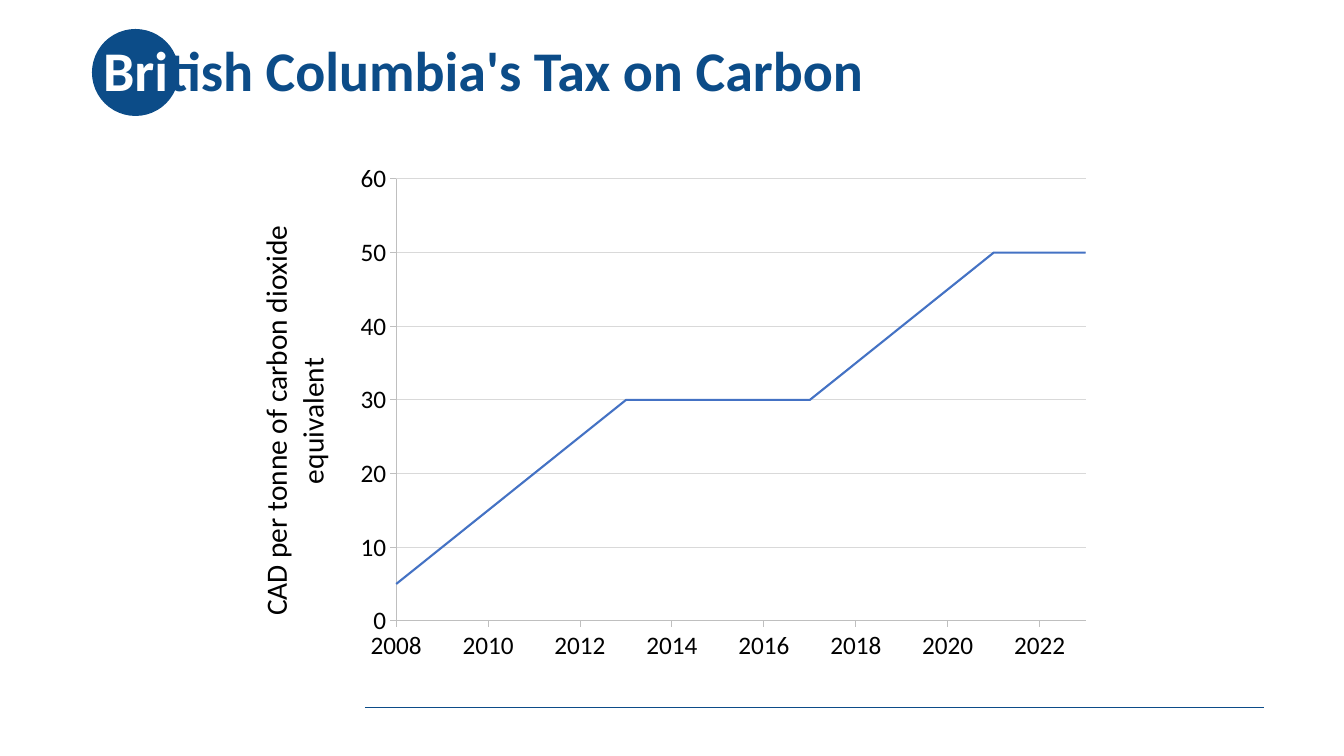
import dataclasses

import lxml.etree
import pptx
import pptx.chart.data
import pptx.dml.color
import pptx.enum.chart
import pptx.enum.shapes
import pptx.enum.text
import pptx.oxml.ns
import pptx.util

PX = 12192000 / 1344
YEARS = range(2008, 2024)
TAX = [5, 10, 15, 20, 25, 30, 30, 30, 30, 30, 35, 40, 45, 50, 50, 50]


@dataclasses.dataclass(frozen=True)
class Theme:
    """Colours, font and type sizes of the slide."""
    font: str = "Calibri"
    brand: str = "0C4C88"
    paper: str = "FFFFFF"
    ink: str = "000000"
    curve: str = "4472C4"
    axis: str = "BFBFBF"
    grid: str = "D9D9D9"
    title: int = 40
    axis_title: int = 21
    labels: int = 18


THEME = Theme()


def px(*lengths):
    """Turn px lengths into a list of EMU lengths."""
    return [pptx.util.Emu(round(n * PX)) for n in lengths]


def rgb(color):
    """Return the RGB colour of a hex string."""
    return pptx.dml.color.RGBColor.from_string(color)


def set_font(font, size, color, bold=False):
    """Apply the theme font with a size, colour and weight."""
    font.name = THEME.font
    font.size = pptx.util.Pt(size)
    font.bold = bold
    font.color.rgb = rgb(color)


def set_line(line, color, width):
    """Give a line a colour and a width in points."""
    line.color.rgb = rgb(color)
    line.width = pptx.util.Pt(width)


def set_layout(parent, index, **parts):
    """Place a chart part by fractions of the chart box."""
    qn = pptx.oxml.ns.qn
    for old in parent.findall(qn("c:layout")):
        parent.remove(old)
    layout = lxml.etree.Element(qn("c:layout"))
    manual = lxml.etree.SubElement(layout, qn("c:manualLayout"))
    for tag, value in parts.items():
        lxml.etree.SubElement(manual, qn(f"c:{tag}")).set("val", str(value))
    parent.insert(index, layout)


def add_header(s, x, y, w, h):
    """Put the title in the box over a disc behind its first letters."""
    disc = s.shapes.add_shape(pptx.enum.shapes.MSO_SHAPE.OVAL, *px(x - 1, y + 29, 87, 87))
    disc.shadow.inherit = False
    disc.fill.solid()
    disc.fill.fore_color.rgb = rgb(THEME.brand)
    disc.line.fill.background()

    title = s.shapes.title
    title.left, title.top, title.width, title.height = px(x, y, w, h)
    title.element.getparent().append(title.element)
    tf = title.text_frame
    tf.word_wrap = True
    tf.vertical_anchor = pptx.enum.text.MSO_ANCHOR.MIDDLE
    p = tf.paragraphs[0]
    p.alignment = pptx.enum.text.PP_ALIGN.LEFT
    p.line_spacing = 0.9
    for text, color in (("Bri", THEME.paper), ("tish Columbia's Tax on Carbon", THEME.brand)):
        r = p.add_run()
        r.text = text
        set_font(r.font, THEME.title, color, bold=True)


def add_tax_chart(s, x, y, w, h):
    """Draw the carbon tax by year as a smooth curve in the box."""
    data = pptx.chart.data.XyChartData()
    points = data.add_series("Series 1")
    for year, tax in zip(YEARS, TAX):
        points.add_data_point(year, tax)
    kind = pptx.enum.chart.XL_CHART_TYPE.XY_SCATTER_SMOOTH_NO_MARKERS
    chart = s.shapes.add_chart(kind, *px(x, y, w, h), data).chart
    chart.has_title = False
    chart.has_legend = False
    set_font(chart.font, THEME.labels, THEME.ink)
    chart.plots[0].vary_by_categories = False
    curve = chart.plots[0].series[0]
    curve.smooth = True
    curve.marker.style = pptx.enum.chart.XL_MARKER_STYLE.NONE
    set_line(curve.format.line, THEME.curve, 1.5)

    scales = ((chart.category_axis, YEARS[0], YEARS[-1], 2), (chart.value_axis, 0, 60, 10))
    for axis, low, high, step in scales:
        axis.minimum_scale, axis.maximum_scale, axis.major_unit = low, high, step
        axis.major_tick_mark = pptx.enum.chart.XL_TICK_MARK.OUTSIDE
        axis.minor_tick_mark = pptx.enum.chart.XL_TICK_MARK.NONE
        axis.tick_labels.number_format = "General"
        axis.tick_labels.number_format_is_linked = False
        set_font(axis.tick_labels.font, THEME.labels, THEME.ink)
        set_line(axis.format.line, THEME.axis, 0.75)
    chart.category_axis.has_major_gridlines = False
    chart.value_axis.has_major_gridlines = True
    set_line(chart.value_axis.major_gridlines.format.line, THEME.grid, 0.75)

    axis_title = chart.value_axis.axis_title
    tf = axis_title.text_frame
    tf.text = "CAD per tonne of carbon dioxide equivalent"
    set_font(tf.paragraphs[0].font, THEME.axis_title, THEME.ink)
    body = axis_title.element.find(".//" + pptx.oxml.ns.qn("a:bodyPr")) if hasattr(
        axis_title, "element") else tf.paragraphs[0]._p.getparent().find(pptx.oxml.ns.qn("a:bodyPr"))
    body.set("rot", "-5400000")
    body.set("vert", "horz")
    title_xml = body.getparent().getparent().getparent()
    set_layout(title_xml, 1, xMode="edge", yMode="edge", x=0.01, y=0.13)
    plot_xml = chart.element.find(".//" + pptx.oxml.ns.qn("c:plotArea")) if hasattr(
        chart, "element") else chart._chartSpace.find(".//" + pptx.oxml.ns.qn("c:plotArea"))
    set_layout(plot_xml, 0, layoutTarget="inner", xMode="edge", yMode="edge",
               x=0.18, y=0.05, w=0.8, h=0.85)


def add_footer_rule(s, x, y, w):
    """Draw the thin rule along the foot of the slide."""
    rule = s.shapes.add_connector(
        pptx.enum.shapes.MSO_CONNECTOR.STRAIGHT, *px(x, y, x + w, y))
    set_line(rule.line, THEME.brand, 0.5)
    lxml.etree.SubElement(rule.element.spPr, pptx.oxml.ns.qn("a:effectLst"))


def main():
    """Build and save the slide."""
    prs = pptx.Presentation()
    prs.slide_width, prs.slide_height = px(1344, 756)
    s = prs.slides.add_slide(prs.slide_layouts[5])
    add_footer_rule(s, 365, 707, 899)
    add_tax_chart(s, 241, 153, 862, 520)
    add_header(s, 93, 0, 1159, 146)
    prs.save("out.pptx")


if __name__ == "__main__":
    main()
